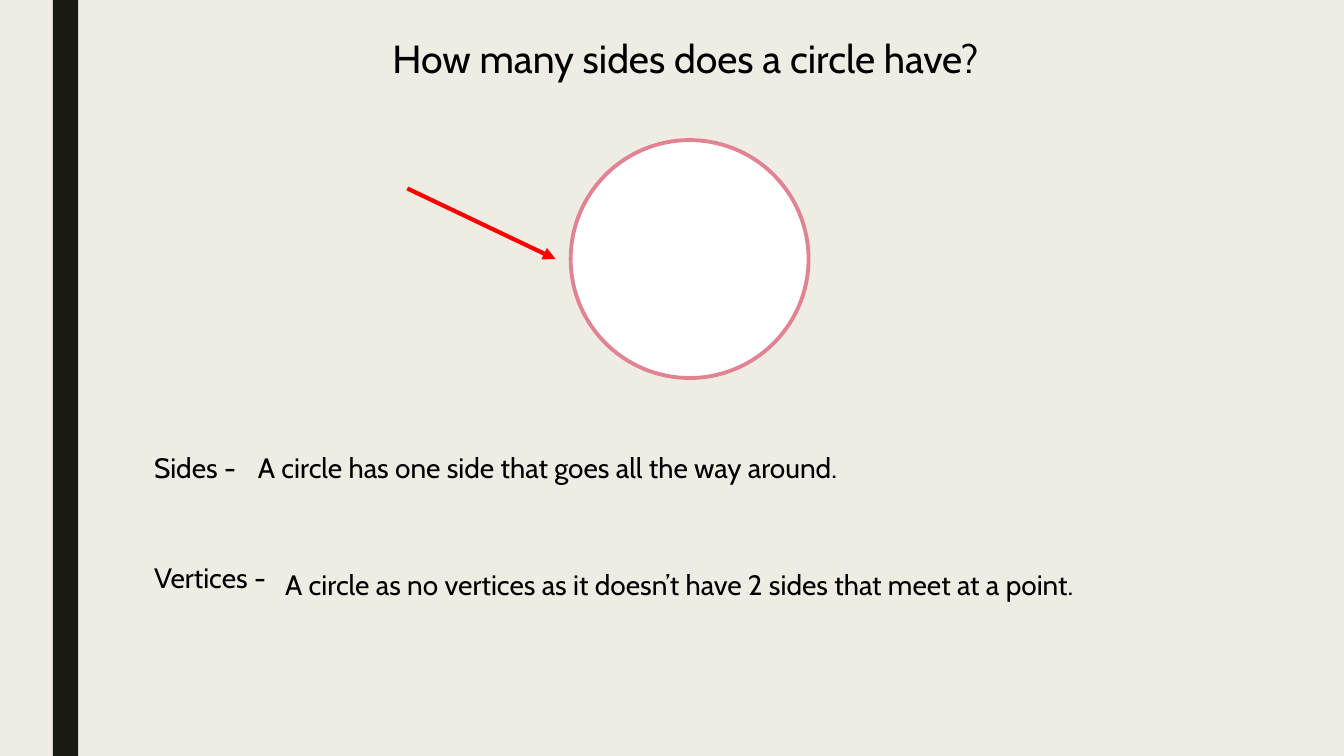
from lxml import etree
from pptx import Presentation, util as u
from pptx.dml.color import RGBColor
from pptx.enum import shapes, text
from pptx.oxml.ns import qn

CREAM = RGBColor(0xEF, 0xED, 0xE3)
OLIVE = RGBColor(0x19, 0x1B, 0x0E)
PINK = RGBColor(0xE2, 0x83, 0x94)
RED = RGBColor(0xFF, 0, 0)
WHITE = RGBColor(0xFF, 0xFF, 0xFF)
BLACK = RGBColor(0, 0, 0)


def write(box, words, size=20, color=BLACK, font="Cabin", align=text.PP_ALIGN.LEFT):
    frame = box.text_frame
    frame.word_wrap = True
    frame.auto_size = text.MSO_AUTO_SIZE.NONE
    frame.vertical_anchor = text.MSO_ANCHOR.TOP
    para = frame.paragraphs[0]
    para.alignment = align
    para.line_spacing = 1.0
    para.space_before = u.Pt(0)
    span = para.add_run()
    span.text = words
    span.font.name = font
    span.font.size = u.Pt(size)
    span.font.color.rgb = color


class Lesson:
    def __init__(self, deck):
        self.deck = deck
        self.page = deck.slides.add_slide(deck.slide_layouts[5])
        self.page.background.fill.solid()
        self.page.background.fill.fore_color.rgb = CREAM

    def across(self, percent):
        return round(self.deck.slide_width * percent / 100)

    def down(self, percent):
        return round(self.deck.slide_height * percent / 100)

    def place(self, left, top, width, height):
        return self.across(left), self.down(top), self.across(width), self.down(height)

    def title(self, words, *area):
        box = self.page.shapes.title
        box.left, box.top, box.width, box.height = self.place(*area)
        write(box, words, size=28, align=text.PP_ALIGN.CENTER)

    def label(self, words, *area):
        write(self.page.shapes.add_textbox(*self.place(*area)), words)

    def shape(self, kind, *area, fill, line=None, weight=2.75):
        figure = self.page.shapes.add_shape(kind, *self.place(*area))
        figure.shadow.inherit = False
        figure.fill.solid()
        figure.fill.fore_color.rgb = fill
        if line is None:
            figure.line.fill.background()
        else:
            figure.line.color.rgb = line
            figure.line.width = u.Pt(weight)

    def arrow(self, left, top, right, bottom, color, weight=3):
        arrow = self.page.shapes.add_connector(
            shapes.MSO_CONNECTOR.STRAIGHT, self.across(left), self.down(top),
            self.across(right), self.down(bottom))
        arrow.line.color.rgb = color
        arrow.line.width = u.Pt(weight)
        properties = arrow._element.spPr
        etree.SubElement(properties.find(qn("a:ln")), qn("a:tailEnd"), type="triangle")
        etree.SubElement(properties, qn("a:effectLst"))


def main():
    deck = Presentation()
    deck.slide_width, deck.slide_height = u.Inches(13.33), u.Inches(7.5)
    lesson = Lesson(deck)
    lesson.shape(shapes.MSO_SHAPE.RECTANGLE, 3.93, 0, 1.88, 100, fill=OLIVE)
    lesson.title("How many sides does a circle have?", 10.43, 3.87, 81.1, 7.6)
    lesson.shape(shapes.MSO_SHAPE.OVAL, 42.46, 18.53, 17.7, 31.47, fill=WHITE, line=PINK)
    lesson.arrow(30.31, 24.93, 41.34, 34.27, RED)
    for words, left, top, width in (
        ("Sides -", 10.73, 58.93, 8.93),
        ("A circle has one side that goes all the way around.", 18.45, 58.93, 79.52),
        ("Vertices -", 10.73, 73.47, 10.73),
        ("A circle as no vertices as it doesn’t have 2 sides that meet at a point.",
         20.48, 74.4, 79.52),
    ):
        lesson.label(words, left, top, width, 5.87)
    deck.save("out.pptx")


if __name__ == "__main__":
    main()
